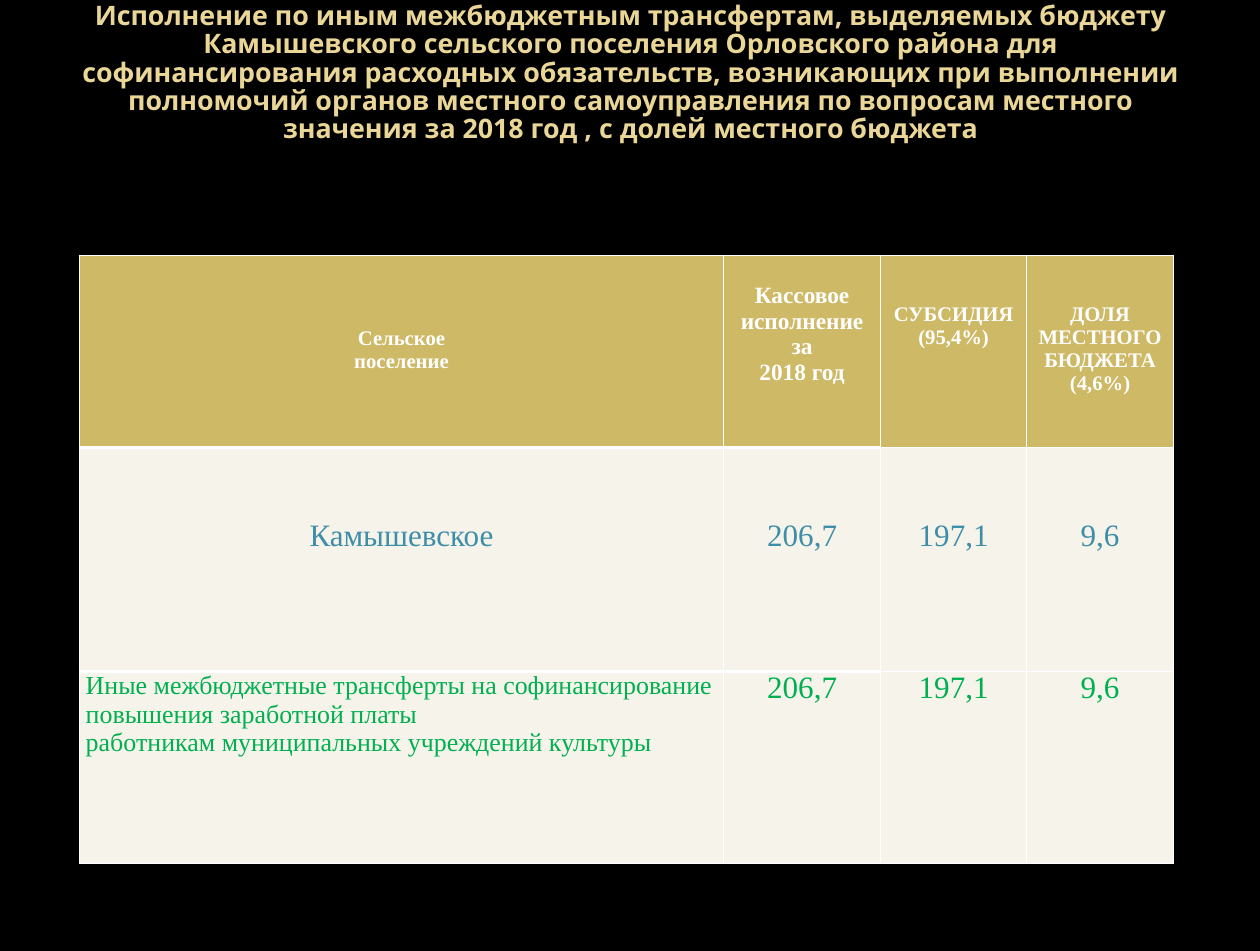
from dataclasses import dataclass

from lxml import etree
from pptx import Presentation
from pptx.dml.color import RGBColor
from pptx.enum.text import MSO_ANCHOR, PP_ALIGN
from pptx.oxml.ns import qn
from pptx.util import Inches, Pt

LEFT, CENTER = PP_ALIGN.LEFT, PP_ALIGN.CENTER
TOP = MSO_ANCHOR.TOP
BLANK_LAYOUT = 6


@dataclass(frozen=True)
class Theme:
    background: str = "000000"
    title: str = "EAD696"
    header_fill: str = "CEB966"
    body_fill: str = "F6F3EA"
    header_text: str = "FFFFFF"
    settlement_text: str = "3E8EA9"
    transfer_text: str = "00B050"
    border: str = "FFFFFF"
    title_font: str = "Open Sans"
    table_font: str = "Times New Roman"
    title_size: float = 20.7
    small_header_size: int = 16
    header_size: int = 18
    transfer_size: int = 20
    value_size: int = 24
    thin: int = 1
    thick: int = 3


@dataclass(frozen=True)
class Entry:
    """One table cell; drop is the gap above its text in inches."""
    text: str
    size: float
    drop: float = 0
    align: PP_ALIGN = CENTER


@dataclass(frozen=True)
class Band:
    """One table row; height is a percentage of the slide."""
    height: float
    fill: str
    color: str
    bold: bool
    entries: tuple


THEME = Theme()

TITLE = (
    "Исполнение по иным межбюджетным трансфертам, выделяемых бюджету "
    "Камышевского сельского поселения Орловского района для "
    "софинансирования расходных обязательств, возникающих при выполнении "
    "полномочий органов местного самоуправления по вопросам местного "
    "значения за 2018 год , с долей местного бюджета"
)
TRANSFER = (
    "Иные межбюджетные трансферты на софинансирование повышения заработной платы\n"
    "работникам муниципальных учреждений культуры"
)
VALUES = ("206,7", "197,1", "9,6")
VALUE_DROP = 0.77
COLUMN_SHARES = (51.15, 12.44, 11.62, 11.62)
THICK_RULE_COLUMNS = 2

BANDS = (
    Band(20.2, THEME.header_fill, THEME.header_text, True, (
        Entry("Сельское\nпоселение", THEME.small_header_size, 0.77),
        Entry("Кассовое\nисполнение\nза\n2018 год", THEME.header_size, 0.29),
        Entry("СУБСИДИЯ\n(95,4%)", THEME.small_header_size, 0.51),
        Entry("ДОЛЯ\nМЕСТНОГО\nБЮДЖЕТА\n(4,6%)", THEME.small_header_size, 0.51),
    )),
    Band(23.53, THEME.body_fill, THEME.settlement_text, False, tuple(
        Entry(text, THEME.value_size, VALUE_DROP)
        for text in ("Камышевское", *VALUES)
    )),
    Band(20.2, THEME.body_fill, THEME.transfer_text, False, (
        Entry(TRANSFER, THEME.transfer_size, align=LEFT),
        *(Entry(text, THEME.value_size) for text in VALUES),
    )),
)


class SlideBuilder:
    """Places elements by percentages of the slide's width and height."""

    def __init__(self, deck, theme):
        self.deck = deck
        self.theme = theme
        self.page = deck.slides.add_slide(deck.slide_layouts[BLANK_LAYOUT])
        background = self.page.background.fill
        background.solid()
        background.fore_color.rgb = RGBColor.from_string(theme.background)

    def across(self, share):
        return round(self.deck.slide_width * share / 100)

    def down(self, share):
        return round(self.deck.slide_height * share / 100)

    def style(self, frame, font_name, size, color, bold, align):
        for para in frame.paragraphs:
            para.alignment = align
            font = para.font
            font.name, font.size, font.bold = font_name, Pt(size), bold
            font.color.rgb = RGBColor.from_string(color)

    def title(self, text, left, top, width, height):
        box = self.page.shapes.add_textbox(
            self.across(left), self.down(top), self.across(width), self.down(height))
        frame = box.text_frame
        frame.word_wrap = True
        frame.vertical_anchor = TOP
        frame.margin_left = frame.margin_right = Inches(0.14)
        frame.margin_top = Inches(0.03)
        frame.text = text
        theme = self.theme
        self.style(frame, theme.title_font, theme.title_size, theme.title, True, CENTER)
        frame.paragraphs[0].line_spacing = 0.88

    def table(self, bands, column_shares, left, top):
        table = self.page.shapes.add_table(
            len(bands), len(column_shares), self.across(left), self.down(top),
            self.across(sum(column_shares)),
            self.down(sum(band.height for band in bands))).table
        table.first_row = table.horz_banding = False
        for column, share in zip(table.columns, column_shares):
            column.width = self.across(share)
        for row_index, band in enumerate(bands):
            table.rows[row_index].height = self.down(band.height)
            for column_index, entry in enumerate(band.entries):
                cell = table.cell(row_index, column_index)
                self.fill_cell(cell, band, entry)
                ruled = column_index < THICK_RULE_COLUMNS
                self.border_cell(cell, ruled and row_index > 0,
                                 ruled and row_index < len(bands) - 1)

    def fill_cell(self, cell, band, entry):
        cell.fill.solid()
        cell.fill.fore_color.rgb = RGBColor.from_string(band.fill)
        cell.vertical_anchor = TOP
        cell.margin_left = cell.margin_right = Inches(0.07)
        cell.margin_top, cell.margin_bottom = Inches(entry.drop), 0
        cell.text = entry.text
        self.style(cell.text_frame, self.theme.table_font, entry.size,
                   band.color, band.bold, entry.align)

    def border_cell(self, cell, thick_top, thick_bottom):
        properties = cell._tc.get_or_add_tcPr()
        edges = (("a:lnL", False), ("a:lnR", False),
                 ("a:lnT", thick_top), ("a:lnB", thick_bottom))
        for position, (tag, is_thick) in enumerate(edges):
            weight = self.theme.thick if is_thick else self.theme.thin
            line = etree.Element(qn(tag), w=str(Pt(weight)))
            fill = etree.SubElement(line, qn("a:solidFill"))
            etree.SubElement(fill, qn("a:srgbClr"), val=self.theme.border)
            properties.insert(position, line)


def main():
    deck = Presentation()
    deck.slide_width, deck.slide_height = Inches(13.51), Inches(10.2)
    builder = SlideBuilder(deck, THEME)
    builder.title(TITLE, left=5.11, top=0, width=89.86, height=20.69)
    builder.table(BANDS, COLUMN_SHARES, left=6.29, top=26.86)
    deck.save("out.pptx")


if __name__ == "__main__":
    main()
